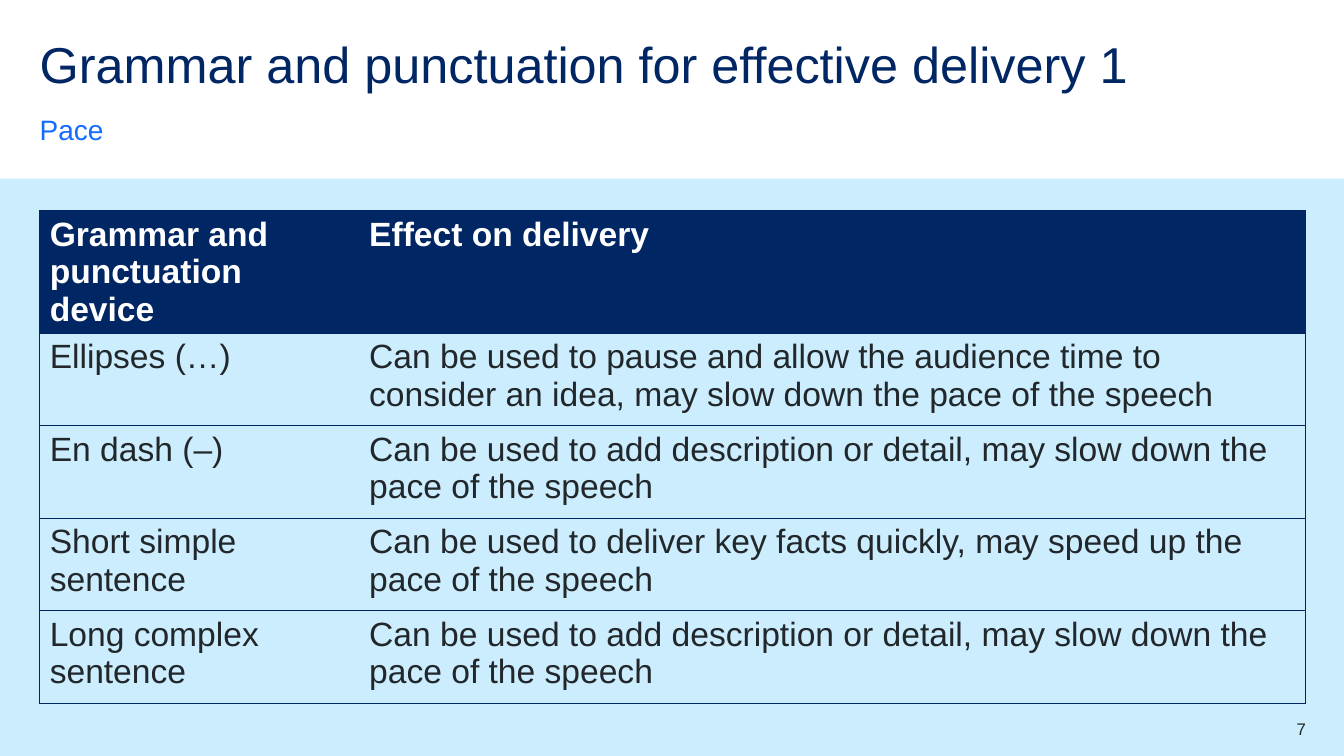
from dataclasses import dataclass

from lxml import etree
from pptx import Presentation, util as u
from pptx.dml.color import RGBColor
from pptx.enum import shapes, text
from pptx.oxml.ns import qn


@dataclass(frozen=True)
class Theme:
    font: str = "Arial"
    navy: str = "002664"
    blue: str = "146CFD"
    pale: str = "CBEDFD"
    ink: str = "22272B"
    white: str = "FFFFFF"
    title: int = 36
    subtitle: int = 20
    table: int = 24
    small: int = 12
    rule: float = 0.5


ROWS = [
    ("Grammar and punctuation device", "Effect on delivery"),
    ("Ellipses (…)", "Can be used to pause and allow the audience time to "
     "consider an idea, may slow down the pace of the speech"),
    ("En dash (–)", "Can be used to add description or detail, "
     "may slow down the pace of the speech"),
    ("Short simple sentence", "Can be used to deliver key facts quickly, "
     "may speed up the pace of the speech"),
    ("Long complex sentence", "Can be used to add description or detail, "
     "may slow down the pace of the speech"),
]


def write(tf, content, size, color, font, bold=False, align=text.PP_ALIGN.LEFT,
          spacing=1.0, after=0):
    p = tf.paragraphs[0]
    p.alignment = align
    p.line_spacing = spacing
    p.space_before = u.Pt(0)
    p.space_after = u.Pt(after)
    r = p.add_run()
    r.text = content
    r.font.name = font
    r.font.size = u.Pt(size)
    r.font.bold = bold
    r.font.color.rgb = RGBColor.from_string(color)
    return p


class SlideBuilder:
    def __init__(self, prs, theme):
        self.theme = theme
        self.s = prs.slides.add_slide(prs.slide_layouts[1])

    def frame(self, sp, box, anchor):
        sp.left, sp.top, sp.width, sp.height = (u.Cm(v) for v in box)
        tf = sp.text_frame
        tf.margin_left = tf.margin_right = tf.margin_top = tf.margin_bottom = 0
        tf.word_wrap = True
        tf.auto_size = text.MSO_AUTO_SIZE.NONE
        tf.vertical_anchor = anchor
        return tf

    def panel(self, box, color):
        sp = self.s.shapes.add_shape(shapes.MSO_SHAPE.RECTANGLE,
                                     *(u.Cm(v) for v in box))
        sp.shadow.inherit = False
        sp.fill.solid()
        sp.fill.fore_color.rgb = RGBColor.from_string(color)
        sp.line.fill.background()

    def title(self, content, box):
        t = self.theme
        tf = self.frame(self.s.shapes.title, box, text.MSO_ANCHOR.TOP)
        write(tf, content, t.title, t.navy, t.font, spacing=0.9)

    def subtitle(self, content, box):
        t = self.theme
        tf = self.frame(self.s.placeholders[1], box, text.MSO_ANCHOR.BOTTOM)
        p = write(tf, content, t.subtitle, t.blue, t.font, spacing=1.5, after=12)
        pPr = p._p.get_or_add_pPr()
        pPr.set("marL", "0")
        pPr.set("indent", "0")
        etree.SubElement(pPr, qn("a:buNone"))

    def page_number(self, content, box):
        t = self.theme
        sp = self.s.shapes.add_textbox(*(u.Cm(v) for v in box))
        tf = self.frame(sp, box, text.MSO_ANCHOR.TOP)
        write(tf, content, t.small, t.ink, t.font, align=text.PP_ALIGN.RIGHT)

    def borders(self, cell, sides):
        tcPr = cell._tc.get_or_add_tcPr()
        for side in "LRTB":
            ln = etree.SubElement(tcPr, qn(f"a:ln{side}"))
            if side in sides:
                ln.set("w", str(u.Pt(self.theme.rule)))
                fill = etree.SubElement(ln, qn("a:solidFill"))
                etree.SubElement(fill, qn("a:srgbClr"), val=self.theme.navy)
            else:
                ln.set("w", "0")
                etree.SubElement(ln, qn("a:noFill"))

    def table(self, rows, left, top, widths, row_height):
        t = self.theme
        tbl = self.s.shapes.add_table(
            len(rows), len(widths), u.Cm(left), u.Cm(top),
            u.Cm(sum(widths)), u.Cm(row_height * len(rows))).table
        tbl.horz_banding = False
        for col, width in zip(tbl.columns, widths):
            col.width = u.Cm(width)
        for i, row in enumerate(rows):
            tbl.rows[i].height = u.Cm(row_height)
            header = i == 0
            for j, content in enumerate(row):
                cell = tbl.cell(i, j)
                self.borders(cell, "TB" + "LR"[j])
                if header:
                    cell.fill.solid()
                    cell.fill.fore_color.rgb = RGBColor.from_string(t.navy)
                else:
                    cell.fill.background()
                write(cell.text_frame, content, t.table,
                      t.white if header else t.ink, t.font, bold=header)


def main():
    prs = Presentation()
    prs.slide_width, prs.slide_height = u.Cm(33.87), u.Cm(19.05)
    b = SlideBuilder(prs, Theme())
    b.panel((0, 4.5, 33.87, 14.55), b.theme.pale)
    b.page_number("7", (30.91, 18.11, 2, 0.51))
    b.table(ROWS, 1, 5.31, (8.05, 23.85), 2.33)
    b.subtitle("Pace", (1, 2.82, 28, 0.86))
    b.title("Grammar and punctuation for effective delivery 1", (1, 1, 28.5, 1.45))
    prs.save("out.pptx")


if __name__ == "__main__":
    main()
